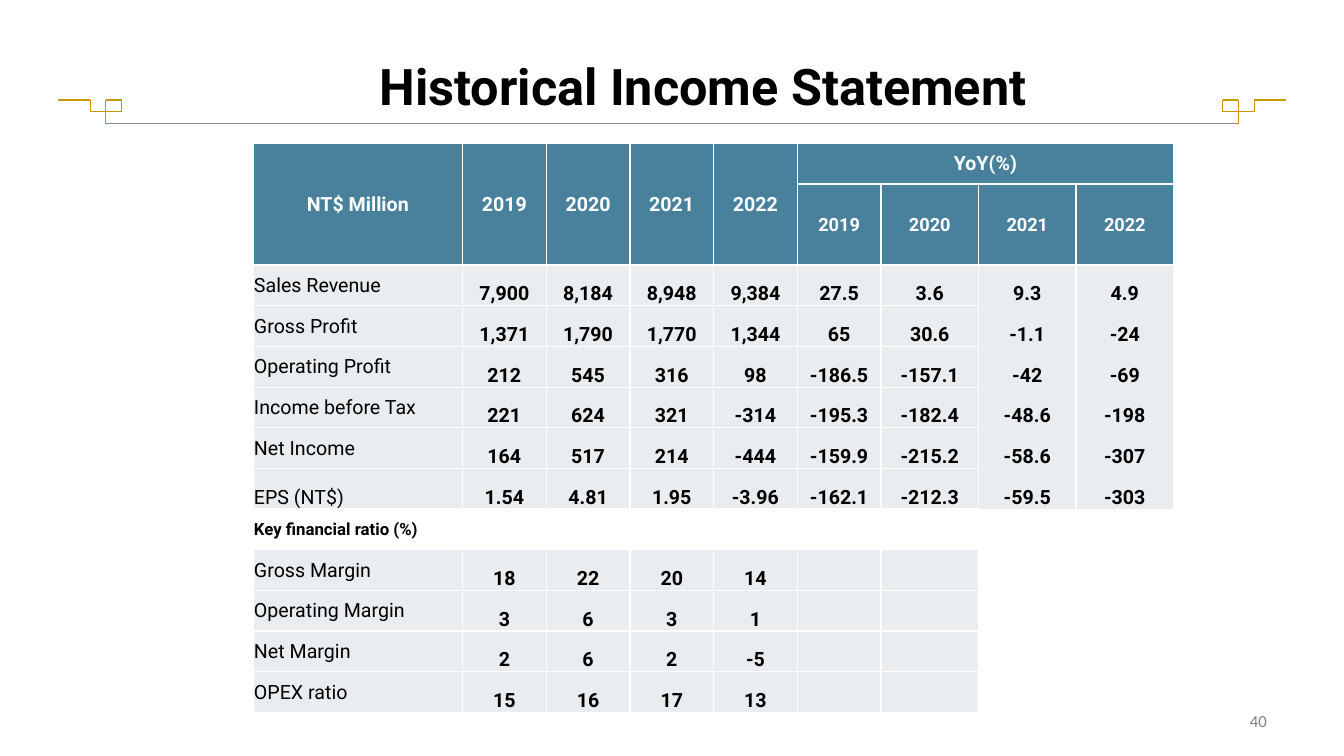
from itertools import pairwise

from lxml import etree
from pptx import Presentation
from pptx.dml.color import RGBColor
from pptx.enum.shapes import MSO_CONNECTOR
from pptx.enum.text import MSO_ANCHOR, PP_ALIGN
from pptx.oxml.ns import qn
from pptx.util import Cm, Pt

LINE = MSO_CONNECTOR.STRAIGHT
MIDDLE, BOTTOM = MSO_ANCHOR.MIDDLE, MSO_ANCHOR.BOTTOM
LEFT, CENTER, RIGHT = PP_ALIGN.LEFT, PP_ALIGN.CENTER, PP_ALIGN.RIGHT

COLORS = {
    "gold": "C89600",
    "rule": "8C8C8C",
    "header": "49819D",
    "body": "E9EDF0",
    "white": "FFFFFF",
    "black": "000000",
    "gray": "808080",
}
NO_GRID_STYLE = "{2D5ABB26-0587-4C30-8999-92F81FD0307C}"
ORNAMENT = [(0, 0), (0.8, 0), (0.8, 0.3), (1.6, 0.3), (1.6, 0), (1.2, 0), (1.2, 0.6)]
COLUMNS = [5.28] + [2.11] * 5 + [2.46] * 3
YEARS = ["2019", "2020", "2021", "2022"]
SECTION = "Key financial ratio (%)"
ROWS = [
    ["NT$ Million", *YEARS, "YoY(%)", "", "", ""],
    [""] * 5 + YEARS,
    ["Sales Revenue", "7,900", "8,184", "8,948", "9,384", "27.5", "3.6", "9.3", "4.9"],
    ["Gross Profit", "1,371", "1,790", "1,770", "1,344", "65", "30.6", "-1.1", "-24"],
    ["Operating Profit", "212", "545", "316", "98", "-186.5", "-157.1", "-42", "-69"],
    ["Income before Tax", "221", "624", "321", "-314", "-195.3", "-182.4", "-48.6", "-198"],
    ["Net Income", "164", "517", "214", "-444", "-159.9", "-215.2", "-58.6", "-307"],
    ["EPS (NT$)", "1.54", "4.81", "1.95", "-3.96", "-162.1", "-212.3", "-59.5", "-303"],
    [SECTION] + [""] * 8,
    ["Gross Margin", "18", "22", "20", "14"] + [""] * 4,
    ["Operating Margin", "3", "6", "3", "1"] + [""] * 4,
    ["Net Margin", "2", "6", "2", "-5"] + [""] * 4,
    ["OPEX ratio", "15", "16", "17", "13"] + [""] * 4,
]
HEADER_ROWS = 2
SECTION_ROW = [row[0] for row in ROWS].index(SECTION)
OPEN_COLUMN = 7


def rgb(name):
    return RGBColor.from_string(COLORS[name])


def write(tf, text, size, color, bold=False, align=LEFT, font="Roboto"):
    tf.text = text
    p = tf.paragraphs[0]
    p.alignment = align
    for f in [p.font] + [r.font for r in p.runs]:
        f.name, f.size, f.bold = font, Pt(size), bold
        f.color.rgb = rgb(color)


def add_text(s, box, text, size, color, **style):
    tf = s.shapes.add_textbox(*map(Cm, box)).text_frame
    tf.word_wrap = True
    tf.vertical_anchor = MIDDLE
    write(tf, text, size, color, **style)


def add_line(s, start, end, color):
    line = s.shapes.add_connector(LINE, *map(Cm, (*start, *end)))
    line.line.color.rgb = rgb(color)
    line.line.width = Pt(0.75)
    etree.SubElement(line._element.spPr, qn("a:effectLst"))


def add_title_rule(s, left, top, width):
    foot_x, foot_y = ORNAMENT[-1]
    add_line(s, (left + foot_x, top + foot_y),
             (left + width - foot_x, top + foot_y), "rule")
    for edge, direction in ((left, 1), (left + width, -1)):
        points = [(edge + direction * x, top + y) for x, y in ORNAMENT]
        for start, end in pairwise(points):
            add_line(s, start, end, "gold")


def set_borders(cell, widths):
    tcPr = cell._tc.get_or_add_tcPr()
    for side, width in widths.items():
        ln = etree.SubElement(tcPr, qn(f"a:ln{side}"), w=str(Pt(width)))
        if width:
            fill = etree.SubElement(ln, qn("a:solidFill"))
            etree.SubElement(fill, qn("a:srgbClr"), val=COLORS["white"])
        else:
            etree.SubElement(ln, qn("a:noFill"))


def border_widths(row, col):
    is_open = row >= HEADER_ROWS and col >= OPEN_COLUMN
    inner = 0 if is_open else 1
    top = 1.5 if row in (1, HEADER_ROWS) else inner
    bottom = 1.5 if row < HEADER_ROWS else inner
    return {"L": 1, "R": 1, "T": top, "B": bottom}


def format_cell(cell, row, col, text):
    is_header, is_label = row < HEADER_ROWS, col == 0
    is_section = row == SECTION_ROW
    cell.margin_left = cell.margin_right = cell.margin_top = Cm(0.02)
    cell.margin_bottom = 0
    set_borders(cell, border_widths(row, col))
    if is_section or (row > SECTION_ROW and col >= OPEN_COLUMN):
        cell.fill.background()
    else:
        cell.fill.solid()
        cell.fill.fore_color.rgb = rgb("header" if is_header else "body")
    at_bottom = not (is_header or is_label or is_section) or text == "EPS (NT$)"
    cell.vertical_anchor = BOTTOM if at_bottom else MIDDLE
    size = 13 if row == 1 else 12 if is_section else 14
    write(cell.text_frame, text, size, "white" if is_header else "black",
          bold=is_header or is_section or not is_label,
          align=LEFT if is_label and not is_header else CENTER)


def add_income_table(s, left, top, width, height):
    frame = s.shapes.add_table(len(ROWS), len(COLUMNS),
                               *map(Cm, (left, top, width, height)))
    table = frame.table
    table.first_row = table.horz_banding = False
    table._tbl.tblPr.find(qn("a:tableStyleId")).text = NO_GRID_STYLE
    for column, share in zip(table.columns, COLUMNS):
        column.width = Cm(width * share / sum(COLUMNS))
    unit = height / (len(ROWS) + 1)
    for i, row in enumerate(table.rows):
        row.height = Cm(unit * (2 if i == 1 else 1))
    for i, values in enumerate(ROWS):
        for j, text in enumerate(values):
            format_cell(table.cell(i, j), i, j, text)
    for j in range(5):
        table.cell(0, j).merge(table.cell(1, j))
    table.cell(0, 5).merge(table.cell(0, 8))


def main():
    prs = Presentation()
    prs.slide_width, prs.slide_height = Cm(33.87), Cm(19.05)
    s = prs.slides.add_slide(prs.slide_layouts[6])
    add_title_rule(s, 1.47, 2.52, 30.94)
    add_text(s, (9.32, 1.25, 21.6, 1.8), "Historical Income Statement", 36,
             "black", bold=True)
    add_text(s, (24.28, 17.65, 7.9, 1.02), "40", 12, "gray",
             align=RIGHT, font="Calibri")
    add_income_table(s, 6.38, 3.61, 23.2, 14.35)
    prs.save("out.pptx")


if __name__ == "__main__":
    main()
